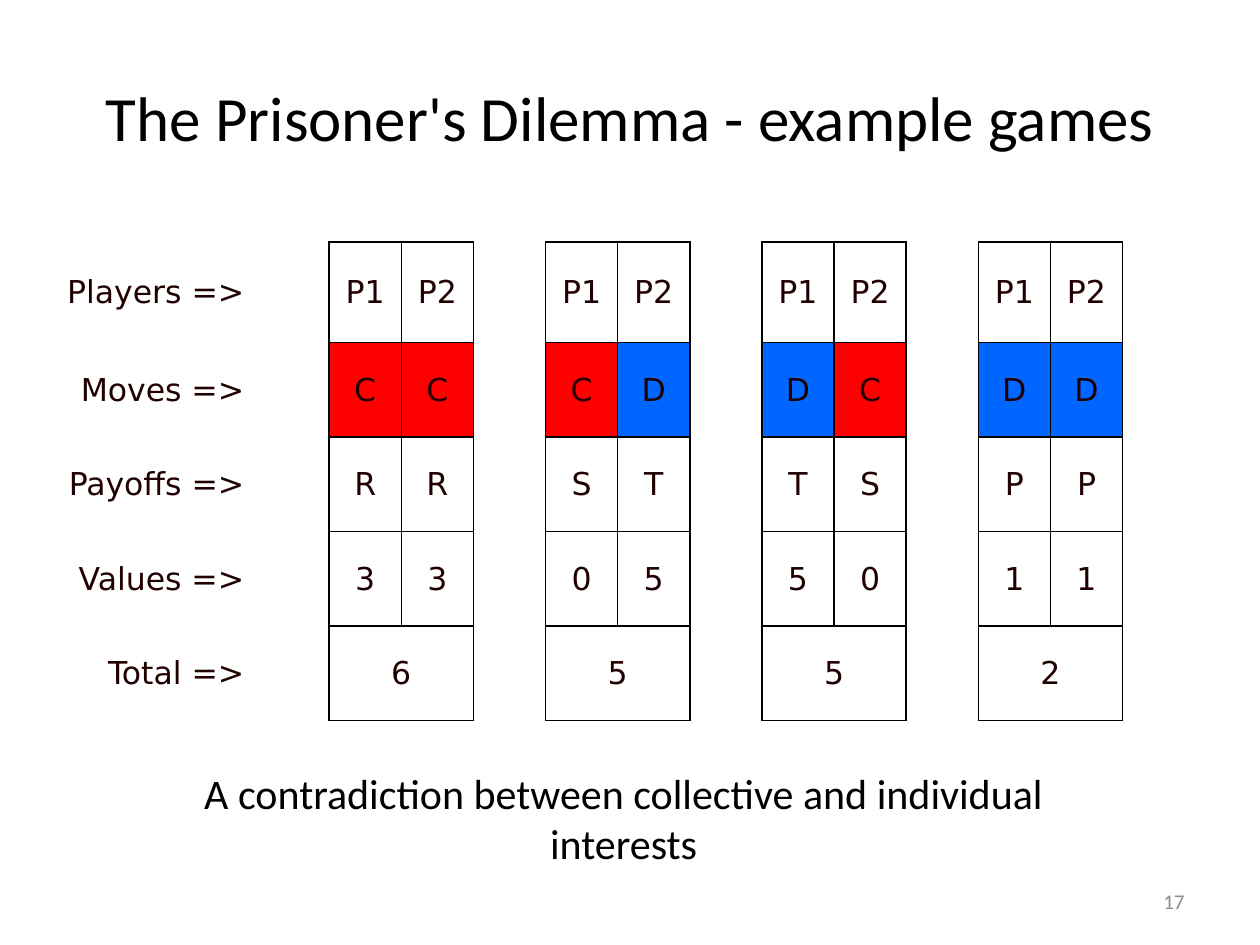
from lxml.etree import SubElement
from pptx import Presentation
from pptx.dml.color import RGBColor
from pptx.enum.text import MSO_ANCHOR as Anchor, PP_ALIGN as Align
from pptx.oxml.ns import qn
from pptx.util import Inches, Pt

COLORS = {
    "text": "000000",
    "table_text": "210000",
    "number": "8C8C8C",
    "border": "000000",
    "C": "FF0000",
    "D": "0066FF",
}
LABELS = ["Players =>", "Moves =>", "Payoffs =>", "Values =>", "Total =>"]
# Each game: moves, payoffs and values of both players
GAMES = [("CC", "RR", (3, 3)), ("CD", "ST", (0, 5)),
         ("DC", "TS", (5, 0)), ("DD", "PP", (1, 1))]
TABLE_WIDTH, LABEL_WIDTH = 8.66, 1.79
ROW_HEIGHTS = [0.8, 0.75, 0.75, 0.75, 0.75]


def style_text(frame, text, size, font, color, align):
    frame.text = text
    para = frame.paragraphs[0]
    para.alignment = align
    span = para.runs[0]
    span.font.size = Pt(size)
    span.font.name = font
    span.font.color.rgb = RGBColor.from_string(COLORS[color])
    return para


def add_text(page, place, text, size, color="text", align=Align.CENTER,
             anchor=Anchor.MIDDLE):
    box = page.shapes.add_textbox(*map(Inches, place))
    frame = box.text_frame
    frame.word_wrap = True
    frame.vertical_anchor = anchor
    style_text(frame, text, size, "Calibri", color, align)
    return frame


def set_borders(cell, sides):
    """Draw the sides named by the letters L, R, T, B and clear the others."""
    properties = cell._tc.get_or_add_tcPr()
    for side in "LRTB":
        line = SubElement(properties, qn(f"a:ln{side}"), w=str(Pt(1)))
        if side in sides:
            fill = SubElement(line, qn("a:solidFill"))
            SubElement(fill, qn("a:srgbClr"), val=COLORS["border"])
        else:
            SubElement(line, qn("a:noFill"))


def style_cell(cell, borders, text="", align=Align.CENTER):
    set_borders(cell, borders)
    cell.vertical_anchor = Anchor.MIDDLE
    if text in ("C", "D"):
        cell.fill.solid()
        cell.fill.fore_color.rgb = RGBColor.from_string(COLORS[text])
    else:
        cell.fill.background()
    if text:
        para = style_text(cell.text_frame, text, 18, "DejaVu Sans",
                          "table_text", align)
        para.line_spacing = 1.02
        para.space_before = Pt(6.5)


def fill_game(table, first, moves, payoffs, values):
    """Fill one gap column and the two player columns after it."""
    pairs = [("P1", "P2"), moves, payoffs, values, (sum(values), "")]
    for row, pair in enumerate(pairs):
        style_cell(table.cell(row, first), "R" if first == 1 else "LR")
        for player, text in enumerate(pair, 1):
            style_cell(table.cell(row, first + player), "LRTB", str(text))
    total = len(pairs) - 1
    table.cell(total, first + 1).merge(table.cell(total, first + 2))


def add_games_table(page):
    count = 1 + 3 * len(GAMES)
    table = page.shapes.add_table(
        len(LABELS), count, Inches(0.25), Inches(1.92),
        Inches(TABLE_WIDTH), Inches(sum(ROW_HEIGHTS))).table
    table.first_row = table.horz_banding = False
    for column in table.columns:
        column.width = Inches((TABLE_WIDTH - LABEL_WIDTH) / (count - 1))
    table.columns[0].width = Inches(LABEL_WIDTH)
    for row, (label, height) in enumerate(zip(LABELS, ROW_HEIGHTS)):
        table.rows[row].height = Inches(height)
        style_cell(table.cell(row, 0), "", label, Align.RIGHT)
    for index, game in enumerate(GAMES):
        fill_game(table, 1 + 3 * index, *game)


def main():
    deck = Presentation()
    deck.slide_width, deck.slide_height = Inches(10), Inches(7.5)
    page = deck.slides.add_slide(deck.slide_layouts[6])
    add_text(page, (7.17, 6.95, 2.33, 0.4), "17", 12, "number", Align.RIGHT)
    title = add_text(page, (0.5, 0.35, 9, 1.15),
                     "The Prisoner's Dilemma - example games", 36)
    title.margin_left = title.margin_right = 0
    title.margin_top = title.margin_bottom = 0
    add_games_table(page)
    add_text(page, (1.07, 6.04, 7.76, 0.9),
             "A contradiction between collective and individual interests",
             24, anchor=Anchor.TOP)
    deck.save("out.pptx")


if __name__ == "__main__":
    main()
